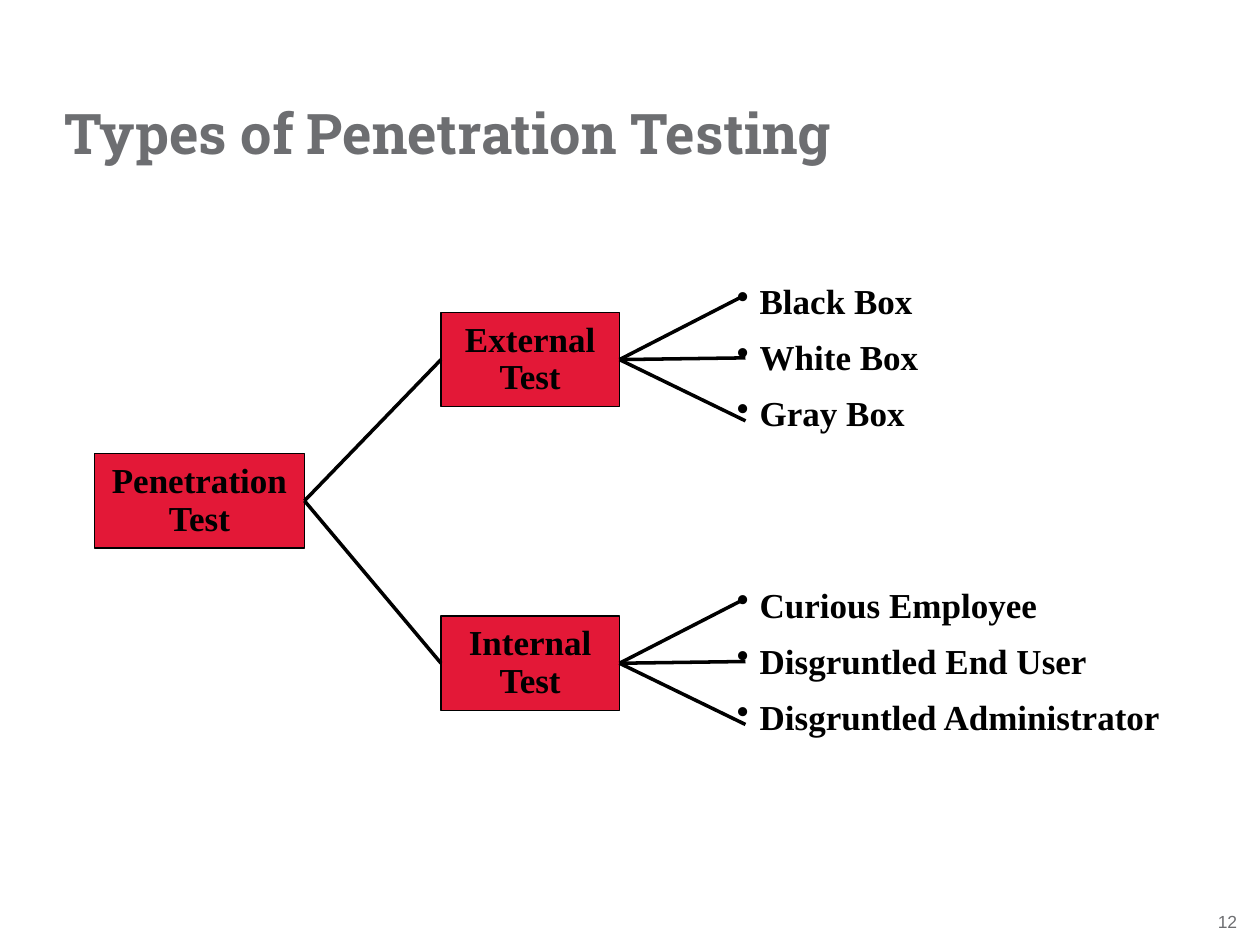
import pptx
import pptx.dml.color
import pptx.enum.shapes
import pptx.enum.text
import pptx.oxml
import pptx.oxml.ns
import pptx.util

Pt = pptx.util.Pt
PP_ALIGN = pptx.enum.text.PP_ALIGN
ANCHOR = pptx.enum.text.MSO_ANCHOR

COLORS = {"ink": "000000", "red": "E31837", "gray": "6D6E71"}
BODY_FONT = "Times New Roman"
TITLE_FONT = "Roboto Slab"
NUMBER_FONT = "Arial"
LEFT, RIGHT = 1, 3
BOX_HEIGHT = 54
BRANCHES = [
    (178.5, ["External", "Test"], ["Black Box", "White Box", "Gray Box"]),
    (352, ["Internal", "Test"],
     ["Curious Employee", "Disgruntled End User", "Disgruntled Administrator"]),
]


def color(name):
    return pptx.dml.color.RGBColor.from_string(COLORS[name])


def add_run(paragraph, text, font, size, ink, bold=True):
    run = paragraph.add_run()
    run.text = text
    run.font.name = font
    run.font.size = Pt(size)
    run.font.bold = bold
    run.font.color.rgb = color(ink)


def add_lines(frame, lines):
    """Put each line in its own paragraph and return the paragraphs."""
    for index, line in enumerate(lines):
        paragraph = frame.paragraphs[0] if index == 0 else frame.add_paragraph()
        add_run(paragraph, line, BODY_FONT, 20, "ink")
    return frame.paragraphs


def clear_margins(frame):
    frame.margin_left = frame.margin_right = 0
    frame.margin_top = frame.margin_bottom = 0


def add_title(slide, text, left, top, width, height):
    title = slide.shapes.title
    title.left, title.top = Pt(left), Pt(top)
    title.width, title.height = Pt(width), Pt(height)
    frame = title.text_frame
    clear_margins(frame)
    frame.auto_size = pptx.enum.text.MSO_AUTO_SIZE.NONE
    frame.vertical_anchor = ANCHOR.MIDDLE
    frame.paragraphs[0].alignment = PP_ALIGN.LEFT
    add_run(frame.paragraphs[0], text, TITLE_FONT, 32, "gray")


def add_page_number(slide, number, left, top, width, height):
    frame = slide.shapes.add_textbox(
        Pt(left), Pt(top), Pt(width), Pt(height)).text_frame
    clear_margins(frame)
    frame.word_wrap = False
    frame.vertical_anchor = ANCHOR.MIDDLE
    frame.paragraphs[0].alignment = PP_ALIGN.RIGHT
    add_run(frame.paragraphs[0], number, NUMBER_FONT, 10, "gray", bold=False)


def add_test_box(slide, lines, left, top, width):
    box = slide.shapes.add_shape(
        pptx.enum.shapes.MSO_SHAPE.RECTANGLE,
        Pt(left), Pt(top), Pt(width), Pt(BOX_HEIGHT))
    box.shadow.inherit = False
    box.fill.solid()
    box.fill.fore_color.rgb = color("red")
    box.line.color.rgb = color("ink")
    box.line.width = Pt(0.75)
    frame = box.text_frame
    frame.word_wrap = False
    frame.vertical_anchor = ANCHOR.MIDDLE
    for paragraph in add_lines(frame, lines):
        paragraph.alignment = PP_ALIGN.CENTER
        paragraph.line_spacing = 0.9
    return box


def add_link(slide, source, end_x=0, end_y=0, target=None):
    """Draw a line from a box's right side to a point or a target box."""
    link = slide.shapes.add_connector(
        pptx.enum.shapes.MSO_CONNECTOR.STRAIGHT, 0, 0, Pt(end_x), Pt(end_y))
    link.begin_connect(source, RIGHT)
    if target is not None:
        link.end_connect(target, LEFT)
    link.line.color.rgb = color("ink")
    link.line.width = Pt(2)
    pptx.oxml.ns.qn("a:effectLst")
    link._element.spPr.append(
        pptx.oxml.parse_xml(f"<a:effectLst {pptx.oxml.ns.nsdecls('a')}/>"))


def add_bullets(slide, items, left, top, width, height):
    frame = slide.shapes.add_textbox(
        Pt(left), Pt(top), Pt(width), Pt(height)).text_frame
    frame.word_wrap = False
    namespace = pptx.oxml.ns.nsdecls("a")
    for paragraph in add_lines(frame, items):
        properties = paragraph._p.get_or_add_pPr()
        properties.set("marL", str(Pt(13)))
        properties.set("indent", str(Pt(-13)))
        for xml in (
            f'<a:spcBef {namespace}><a:spcPct val="40000"/></a:spcBef>',
            f'<a:buChar {namespace} char="•"/>',
        ):
            properties.append(pptx.oxml.parse_xml(xml))


def add_branch(slide, root, lines, items, left, top):
    """Add a test box, its link to the root, and a fan of lines to its items."""
    box = add_test_box(slide, lines, left, top, 102)
    add_link(slide, root, target=box)
    add_bullets(slide, items, left + 162, top - 22.2, 257, 98.6)
    for rise in (-36, 0, 36):
        add_link(slide, box, left + 174, top + 26 + rise)


def main():
    deck = pptx.Presentation()
    deck.slide_width, deck.slide_height = Pt(720), Pt(540)
    slide = deck.slides.add_slide(deck.slide_layouts.get_by_name("Title Only"))
    add_page_number(slide, "12", 694.8, 520.6, 12.2, 12.2)
    add_title(slide, "Types of Penetration Testing", 36.7, 56.2, 646.6, 38.9)
    root = add_test_box(slide, ["Penetration", "Test"], 54, 259.2, 120)
    for top, lines, items in BRANCHES:
        add_branch(slide, root, lines, items, 252, top)
    deck.save("out.pptx")


if __name__ == "__main__":
    main()
